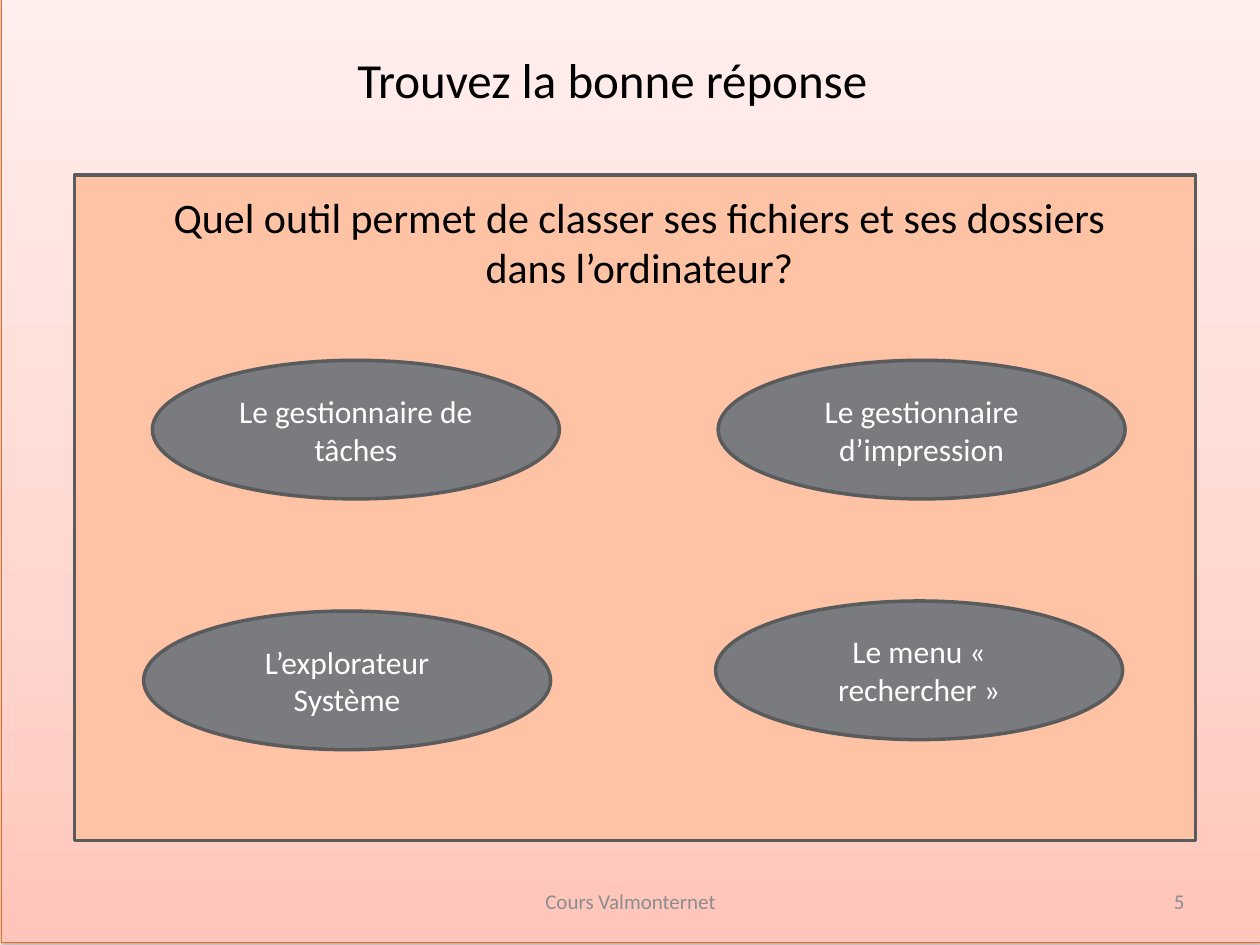
"""Build a quiz slide with one question and four oval answers."""
import copy
from dataclasses import dataclass
from typing import Any

import lxml.etree
import pptx
import pptx.dml.color
import pptx.enum.shapes
import pptx.enum.text
import pptx.oxml.ns
import pptx.util

COLUMNS, ROWS = 100, 75
ALIGN = pptx.enum.text.PP_ALIGN
ANCHOR = pptx.enum.text.MSO_ANCHOR
SHAPE = pptx.enum.shapes.MSO_SHAPE


@dataclass(frozen=True)
class Theme:
    font: str = "Calibri"
    ink: str = "000000"
    muted: str = "8C8C8C"
    light: str = "FFFFFF"
    panel: str = "FDC3A4"
    oval: str = "797B7E"
    outline: str = "5A5B5D"
    frame: str = "F96615"
    gradient: tuple = ((0, "FFC5BA"), (0.35, "FFD6CF"), (1, "FFEFED"))
    title_size: int = 28
    question_size: int = 24
    answer_size: int = 18
    footer_size: int = 12
    line_width: float = 2
    frame_width: float = 0.75


@dataclass(frozen=True)
class Area:
    column: float
    row: float
    columns: float
    rows: float


@dataclass(frozen=True)
class Answer:
    text: str
    column: float
    row: float


THEME = Theme()
OVAL_COLUMNS, OVAL_ROWS = 32.3, 11
ANSWERS = (
    Answer("Le gestionnaire de tâches", 12.1, 28.6),
    Answer("Le menu « rechercher »", 56.8, 47.7),
    Answer("L’explorateur Système", 11.4, 48.5),
    Answer("Le gestionnaire d’impression", 57, 28.6),
)


def color(value: str) -> pptx.dml.color.RGBColor:
    return pptx.dml.color.RGBColor.from_string(value)


def place(deck: Any, area: Area) -> tuple[int, ...]:
    cell_width, cell_height = deck.slide_width / COLUMNS, deck.slide_height / ROWS
    return (round(area.column * cell_width), round(area.row * cell_height),
            round(area.columns * cell_width), round(area.rows * cell_height))


def add_text(box: Any, text: str, *, size: int, ink: str, align: Any = ALIGN.CENTER,
             anchor: Any = ANCHOR.TOP, wrap: bool = True) -> None:
    frame = box.text_frame
    frame.word_wrap = wrap
    frame.vertical_anchor = anchor
    for index, line in enumerate(text.split("\n")):
        para = frame.add_paragraph() if index else frame.paragraphs[0]
        para.alignment = align
        span = para.add_run()
        span.text = line
        span.font.name = THEME.font
        span.font.size = pptx.util.Pt(size)
        span.font.color.rgb = color(ink)


def add_label(deck: Any, page: Any, area: Area, text: str, **style: Any) -> None:
    add_text(page.shapes.add_textbox(*place(deck, area)), text, **style)


def add_outlined(deck: Any, page: Any, kind: Any, area: Area, fill: str,
                 line: str = THEME.outline, width: float = THEME.line_width) -> Any:
    box = page.shapes.add_shape(kind, *place(deck, area))
    box.shadow.inherit = False
    box.fill.solid()
    box.fill.fore_color.rgb = color(fill)
    box.line.color.rgb = color(line)
    box.line.width = pptx.util.Pt(width)
    return box


def add_backdrop(deck: Any, page: Any) -> None:
    box = add_outlined(deck, page, SHAPE.RECTANGLE, Area(0.1, -0.2, COLUMNS, ROWS),
                       THEME.light, THEME.frame, THEME.frame_width)
    box.fill.gradient()
    box.fill.gradient_angle = 90
    properties = box._element.spPr
    qn = pptx.oxml.ns.qn
    stops = properties.find(".//" + qn("a:gsLst"))
    stops.append(copy.deepcopy(stops[-1]))
    for stop, (position, value) in zip(box.fill.gradient_stops, THEME.gradient):
        stop.position = position
        stop.color.rgb = color(value)
    effects = properties.find(qn("a:effectLst"))
    shadow = lxml.etree.SubElement(
        effects, qn("a:outerShdw"), blurRad=str(pptx.util.Pt(3.1)),
        dist=str(pptx.util.Pt(1.6)), dir="5400000", rotWithShape="0")
    shade = lxml.etree.SubElement(shadow, qn("a:srgbClr"), val=THEME.ink)
    lxml.etree.SubElement(shade, qn("a:alpha"), val="38000")


def add_answer(deck: Any, page: Any, answer: Answer) -> None:
    area = Area(answer.column, answer.row, OVAL_COLUMNS, OVAL_ROWS)
    oval = add_outlined(deck, page, SHAPE.OVAL, area, THEME.oval)
    add_text(oval, answer.text, size=THEME.answer_size, ink=THEME.light,
             anchor=ANCHOR.MIDDLE)


def main() -> None:
    deck = pptx.Presentation()
    deck.slide_width, deck.slide_height = pptx.util.Inches(10), pptx.util.Inches(7.5)
    page = deck.slides.add_slide(deck.slide_layouts[6])
    add_backdrop(deck, page)
    add_outlined(deck, page, SHAPE.RECTANGLE, Area(5.9, 13.9, 89, 52.8), THEME.panel)
    add_label(deck, page, Area(12.4, 14.7, 76.7, 9.1),
              "Quel outil permet de classer ses fichiers et ses dossiers\n"
              "dans l’ordinateur?",
              size=THEME.question_size, ink=THEME.ink, wrap=False)
    for answer in ANSWERS:
        add_answer(deck, page, answer)
    add_label(deck, page, Area(11.6, 3.4, 74, 5.7), "Trouvez la bonne réponse",
              size=THEME.title_size, ink=THEME.ink)
    footer = {"size": THEME.footer_size, "ink": THEME.muted, "anchor": ANCHOR.MIDDLE}
    add_label(deck, page, Area(34.2, 69.5, 31.7, 4), "Cours Valmonternet", **footer)
    add_label(deck, page, Area(71.7, 69.5, 23.3, 4), "5", align=ALIGN.RIGHT, **footer)
    deck.save("out.pptx")


if __name__ == "__main__":
    main()
